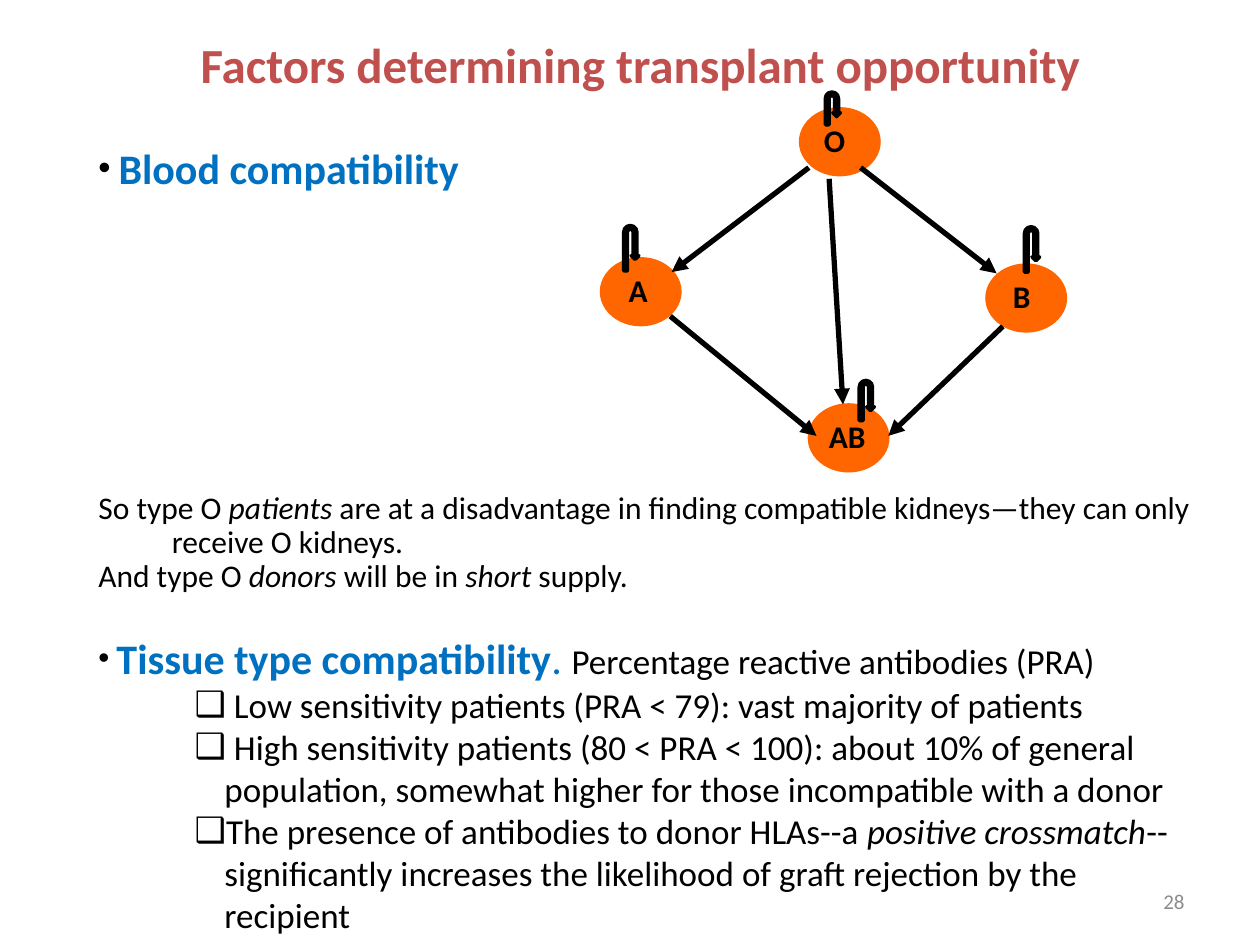
from dataclasses import dataclass

from lxml import etree
from pptx import Presentation
from pptx.dml.color import RGBColor
from pptx.enum.shapes import MSO_CONNECTOR, MSO_SHAPE
from pptx.enum.text import MSO_ANCHOR, MSO_AUTO_SIZE, PP_ALIGN
from pptx.oxml.ns import qn
from pptx.util import Pt

OVAL = MSO_SHAPE.OVAL
U_TURN = MSO_SHAPE.U_TURN_ARROW
STRAIGHT = MSO_CONNECTOR.STRAIGHT
CENTER = PP_ALIGN.CENTER
RIGHT = PP_ALIGN.RIGHT
MIDDLE = MSO_ANCHOR.MIDDLE
TOP = MSO_ANCHOR.TOP
NO_AUTOFIT = MSO_AUTO_SIZE.NONE

FONT = "Calibri"
BLACK = "000000"
BLUE = "0070C0"
RED = "C0504D"
ORANGE = "FF6600"
GRAY = "8C8C8C"
GROUP_WIDTH, GROUP_HEIGHT = 46.8, 39.6
LOOP_WIDTH = 8.64


@dataclass(frozen=True)
class BloodGroup:
    name: str
    left: float
    top: float
    label_left: float
    label_width: float
    loop_left: float
    loop_top: float
    loop_height: float


@dataclass(frozen=True)
class Donation:
    start: tuple[float, float]
    end: tuple[float, float]


@dataclass(frozen=True)
class Span:
    text: str
    size: float = 18
    color: str = BLACK
    bold: bool = False
    italic: bool = False


@dataclass(frozen=True)
class Point:
    spans: tuple[Span, ...]
    bullet: str = ""
    level: int = 0
    margin: float = 0
    indent: float = 0
    before: float = 0
    spacing: float = 1.0


BLOOD_GROUPS = (
    BloodGroup("O", 456.5, 61.2, 463.7, 28.8, 471.6, 52.6, 18.7),
    BloodGroup("A", 342.7, 146.9, 352.1, 28.1, 356.4, 128.9, 25.9),
    BloodGroup("B", 563, 150.5, 571.7, 27.4, 585.4, 129.6, 25.9),
    BloodGroup("AB", 461.5, 230.4, 466.6, 41, 491, 217.4, 23),
)

DONATIONS = (
    Donation((491.8, 95.8), (569.5, 156.2)),
    Donation((462.2, 95.8), (383.8, 155.5)),
    Donation((473.8, 102.2), (481.7, 231.1)),
    Donation((383, 180.7), (466.6, 249.1)),
    Donation((573.1, 186.5), (507.6, 249.1)),
)


def consequence(*spans: Span, before: float = 0) -> Point:
    return Point(spans, margin=42, indent=-42, before=before, spacing=0.9)


def sensitivity(*spans: Span) -> Point:
    return Point(spans, bullet="❑", level=1, margin=72, indent=-17)


POINTS = (
    Point((Span(" ", 20), Span("Blood compatibility", 24, BLUE, True)), bullet="•"),
    consequence(
        Span("So type O "),
        Span("patients", italic=True),
        Span(" are at a disadvantage in finding compatible kidneys—they can only receive O kidneys."),
        before=171,
    ),
    consequence(
        Span("And type O "),
        Span("donors", italic=True),
        Span(" will be in "),
        Span("short", italic=True),
        Span(" supply."),
    ),
    Point(
        (
            Span(" "),
            Span("Tissue type compatibility", 24, BLUE, True),
            Span(". ", 24, BLUE),
            Span("Percentage reactive antibodies (PRA)", 20),
        ),
        bullet="•",
        before=22,
    ),
    sensitivity(Span(" Low sensitivity patients (PRA < 79): vast majority of patients", 20)),
    sensitivity(
        Span(
            " High sensitivity patients (80 < PRA < 100): about 10% of general "
            "population, somewhat higher for those incompatible with a donor",
            20,
        )
    ),
    sensitivity(
        Span("The presence of antibodies to donor HLAs--a ", 20),
        Span("positive crossmatch", 20, italic=True),
        Span("-- significantly increases the likelihood of graft rejection by the recipient", 20),
    ),
)


def rgb(color: str) -> RGBColor:
    return RGBColor.from_string(color)


def write(paragraph, text: str, *, size: float = 18, color: str = BLACK,
          bold: bool = False, italic: bool = False) -> None:
    run = paragraph.add_run()
    run.text = text
    font = run.font
    font.name, font.size, font.bold, font.italic = FONT, Pt(size), bold, italic
    font.color.rgb = rgb(color)


def place(shape, left: float, top: float, width: float, height: float) -> None:
    shape.left, shape.top = Pt(left), Pt(top)
    shape.width, shape.height = Pt(width), Pt(height)


def add_solid(slide, kind, left: float, top: float, width: float, height: float,
              color: str, line_width: float = 0) -> None:
    solid = slide.shapes.add_shape(kind, Pt(left), Pt(top), Pt(width), Pt(height))
    solid.shadow.inherit = False
    solid.fill.solid()
    solid.fill.fore_color.rgb = rgb(color)
    if line_width:
        solid.line.color.rgb = rgb(color)
        solid.line.width = Pt(line_width)
    else:
        solid.line.fill.background()


def add_group(slide, group: BloodGroup) -> None:
    add_solid(slide, OVAL, group.left, group.top, GROUP_WIDTH, GROUP_HEIGHT, ORANGE)
    label = slide.shapes.add_textbox(
        Pt(group.label_left), Pt(group.top + 4.3), Pt(group.label_width), Pt(28.8))
    label.text_frame.word_wrap = False
    write(label.text_frame.paragraphs[0], group.name, bold=True)


def add_donation(slide, donation: Donation) -> None:
    arrow = slide.shapes.add_connector(
        STRAIGHT, *(Pt(value) for value in donation.start + donation.end))
    arrow.line.color.rgb = rgb(BLACK)
    arrow.line.width = Pt(3)
    etree.SubElement(arrow.line._get_or_add_ln(), qn("a:tailEnd"), type="triangle")
    etree.SubElement(arrow._element.spPr, qn("a:effectLst"))


def add_point(paragraph, point: Point) -> None:
    paragraph.level = point.level
    paragraph.space_before = Pt(point.before)
    paragraph.space_after = Pt(0)
    paragraph.line_spacing = point.spacing
    properties = paragraph._p.get_or_add_pPr()
    properties.set("marL", str(Pt(point.margin)))
    properties.set("indent", str(Pt(point.indent)))
    if point.bullet:
        etree.SubElement(properties, qn("a:buChar"), char=point.bullet)
    else:
        etree.SubElement(properties, qn("a:buNone"))
    for span in point.spans:
        write(paragraph, span.text, size=span.size, color=span.color,
              bold=span.bold, italic=span.italic)


def main() -> None:
    deck = Presentation()
    deck.slide_width, deck.slide_height = Pt(720), Pt(540)
    slide = deck.slides.add_slide(deck.slide_layouts[1])

    title = slide.shapes.title
    place(title, 59.8, 18, 612, 37.4)
    title.text_frame.auto_size = NO_AUTOFIT
    heading = title.text_frame.paragraphs[0]
    heading.alignment = CENTER
    write(heading, "Factors determining transplant opportunity", size=28, color=RED, bold=True)

    factors = slide.placeholders[1]
    place(factors, 49, 77.8, 648, 463.7)
    frame = factors.text_frame
    frame.auto_size = NO_AUTOFIT
    frame.vertical_anchor = TOP
    for index, point in enumerate(POINTS):
        add_point(frame.add_paragraph() if index else frame.paragraphs[0], point)

    for group in BLOOD_GROUPS:
        add_group(slide, group)
    for donation in DONATIONS:
        add_donation(slide, donation)

    page = slide.shapes.add_textbox(Pt(516.2), Pt(500.4), Pt(167.8), Pt(28.8))
    page.text_frame.word_wrap = True
    page.text_frame.vertical_anchor = MIDDLE
    page.text_frame.paragraphs[0].alignment = RIGHT
    write(page.text_frame.paragraphs[0], "28", size=12, color=GRAY)

    for group in BLOOD_GROUPS:
        add_solid(slide, U_TURN, group.loop_left, group.loop_top,
                  LOOP_WIDTH, group.loop_height, BLACK, line_width=2)

    deck.save("out.pptx")


if __name__ == "__main__":
    main()
